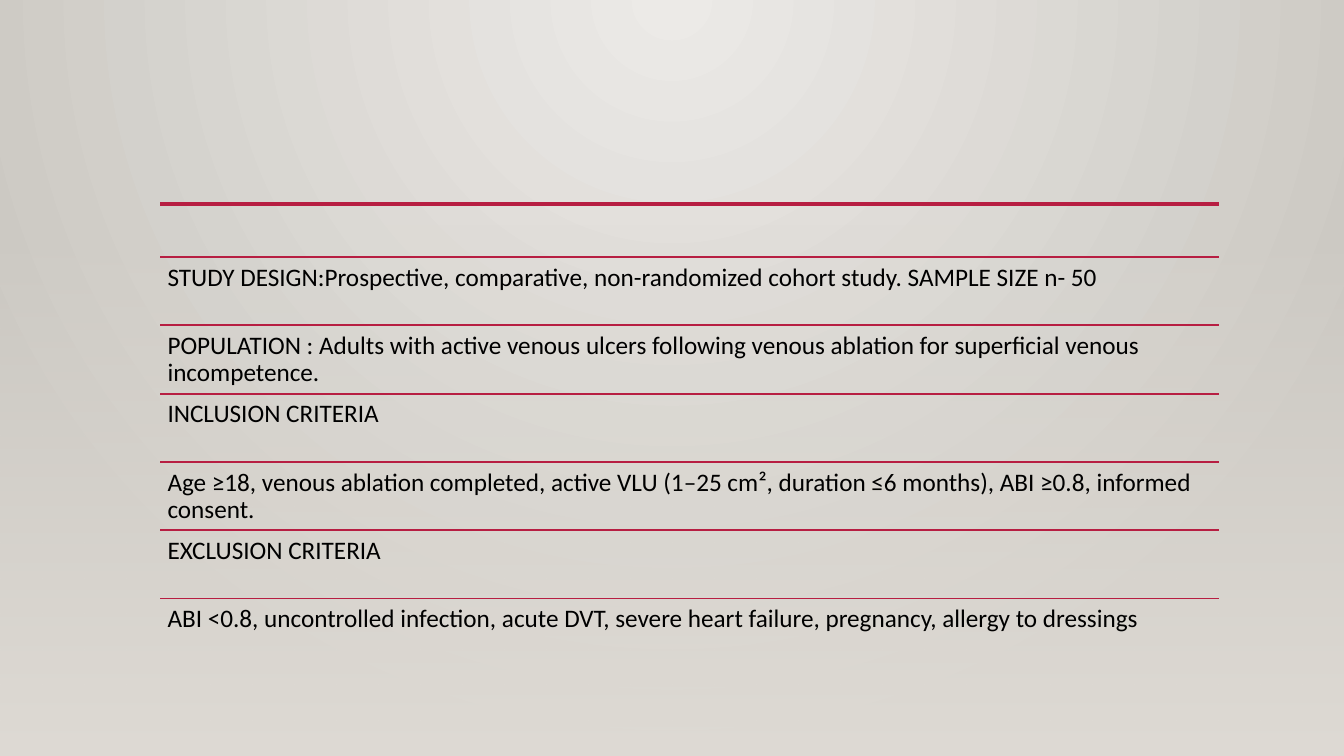
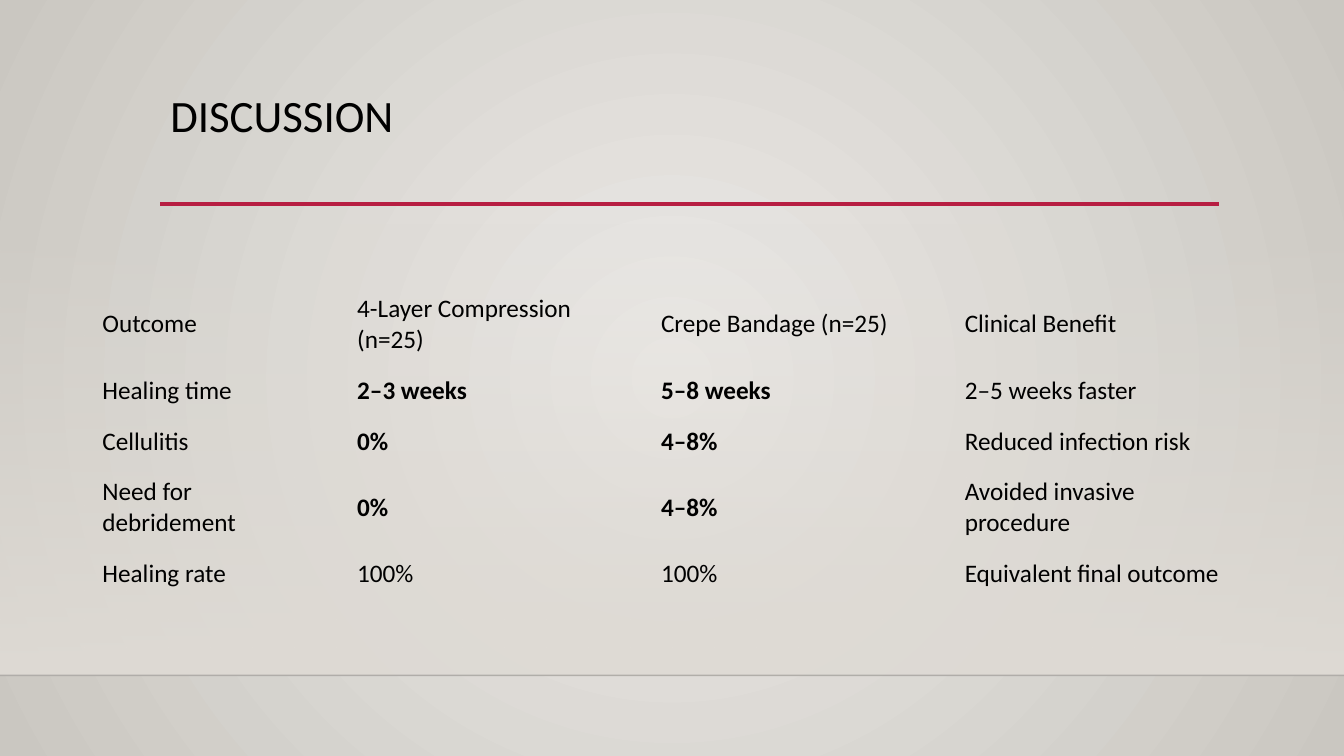
from lxml import etree
from pptx import Presentation
from pptx.dml.color import RGBColor
from pptx.enum.shapes import MSO_CONNECTOR as Connector, MSO_SHAPE as Shape
from pptx.enum.text import MSO_ANCHOR as Anchor, PP_ALIGN as Align
from pptx.oxml import parse_xml
from pptx.oxml.ns import nsdecls, qn
from pptx.util import Pt

# Content
CRITERIA = [
    "STUDY DESIGN:Prospective, comparative, non-randomized cohort study. SAMPLE SIZE n- 50",
    "POPULATION : Adults with active venous ulcers following venous ablation for superficial venous incompetence.",
    "INCLUSION CRITERIA",
    "Age ≥18, venous ablation completed, active VLU (1–25 cm², duration ≤6 months), ABI ≥0.8, informed consent.",
    "EXCLUSION CRITERIA",
    "ABI <0.8, uncontrolled infection, acute DVT, severe heart failure, pregnancy, allergy to dressings",
]
DISCUSSION_TITLE = "DISCUSSION"
OUTCOMES = [
    ("Outcome", "4-Layer Compression (n=25)", "Crepe Bandage (n=25)", "Clinical Benefit"),
    ("Healing time", "2–3 weeks", "5–8 weeks", "2–5 weeks faster"),
    ("Cellulitis", "0%", "4–8%", "Reduced infection risk"),
    ("Need for debridement", "0%", "4–8%", "Avoided invasive procedure"),
    ("Healing rate", "100%", "100%", "Equivalent final outcome"),
]
BOLD_ROWS, BOLD_COLUMNS = (1, 2, 3), (1, 2)

# Shared style, lengths in points
COLORS = {"light": "ECEAE7", "dark": "CAC7C1", "band": "DFDBD5",
          "accent": "B71E42", "floor": "000001", "text": "000000"}
FONT = "Calibri"
SLIDE_WIDTH, SLIDE_HEIGHT = 960, 540
LEFT, WIDTH = 114.5, 756
RULE_TOP, BAND_TOP, FLOOR_TOP = 145.8, 159, 482.4
CRITERIA_TOP, CRITERIA_STEP, CRITERIA_INSET = 183.6, 48.8, 5.2
TABLE_LEFT, TABLE_TOP = 66, 202.3
COLUMN_WIDTHS = (177.2, 217, 217, 217)
ROW_HEIGHTS = (58.3, 36.4, 36.4, 58.3, 36.4)
OUTER_INSET, INNER_INSET = 7.2, 12
PLAIN_TABLE_STYLE = "{2D5ABB26-0587-4C30-8999-92F81FD0307C}"


def set_gradient(parent, stops, direction):
    """Replace the solid fill in parent; stops are (position, colour, alpha)."""
    stop_xml = "".join(
        f'<a:gs pos="{position * 1000}"><a:srgbClr val="{COLORS[name]}">'
        f'<a:alpha val="{alpha * 1000}"/></a:srgbClr></a:gs>'
        for position, name, alpha in stops)
    gradient = parse_xml(f'<a:gradFill {nsdecls("a")} rotWithShape="1">'
                         f'<a:gsLst>{stop_xml}</a:gsLst>{direction}</a:gradFill>')
    parent.replace(parent.find(qn("a:solidFill")), gradient)


def add_line(slide, left, top, width, weight, color="accent", alpha=None):
    line = slide.shapes.add_connector(
        Connector.STRAIGHT, Pt(left), Pt(top), Pt(left + width), Pt(top))
    line.line.color.rgb = RGBColor.from_string(COLORS[color])
    line.line.width = Pt(weight)
    properties = line._element.spPr
    if alpha is not None:
        tone = properties.find(".//" + qn("a:srgbClr"))
        etree.SubElement(tone, qn("a:alpha")).set("val", str(alpha * 1000))
    etree.SubElement(properties, qn("a:effectLst"))


def add_backdrop(slide, focus, band_bottom):
    """Circular background glow, fading band and accent rule."""
    fill = slide.background.fill
    fill.solid()
    fill.fore_color.rgb = RGBColor.from_string(COLORS["light"])
    edges = " ".join(f'{side}="{value * 1000}"' for side, value in zip("ltrb", focus))
    set_gradient(slide.element.find(".//" + qn("p:bgPr")),
                 [(0, "light", 100), (100, "dark", 100)],
                 f'<a:path path="circle"><a:fillToRect {edges}/></a:path>')
    band = slide.shapes.add_shape(
        Shape.RECTANGLE, 0, Pt(BAND_TOP), Pt(SLIDE_WIDTH), Pt(band_bottom - BAND_TOP))
    band.shadow.inherit = False
    band.line.fill.background()
    band.fill.solid()
    set_gradient(band._element.spPr, [(0, "band", 0), (100, "band", 100)],
                 '<a:lin ang="5400000" scaled="0"/>')
    add_line(slide, LEFT, RULE_TOP, WIDTH, 2.5)


def write(frame, text, size=18, bold=False, spacing=None):
    paragraph = frame.paragraphs[0]
    paragraph.alignment = Align.LEFT
    if spacing:
        paragraph.line_spacing = spacing
    run = paragraph.add_run()
    run.text = text
    run.font.name, run.font.size, run.font.bold = FONT, Pt(size), bold
    run.font.color.rgb = RGBColor.from_string(COLORS["text"])


def build_criteria(presentation):
    slide = presentation.slides.add_slide(presentation.slide_layouts[6])
    add_backdrop(slide, (43, 0, 43, 100), SLIDE_HEIGHT)
    for index, text in enumerate(CRITERIA):
        top = CRITERIA_TOP + index * CRITERIA_STEP
        add_line(slide, LEFT, top, WIDTH, 1.25)
        box = slide.shapes.add_textbox(Pt(LEFT), Pt(top), Pt(WIDTH), Pt(CRITERIA_STEP))
        frame = box.text_frame
        frame.word_wrap = True
        frame.margin_left = frame.margin_right = Pt(CRITERIA_INSET)
        frame.margin_top = frame.margin_bottom = Pt(CRITERIA_INSET)
        write(frame, text, spacing=0.9)


def build_discussion(presentation):
    slide = presentation.slides.add_slide(presentation.slide_layouts[5])
    add_backdrop(slide, (50, 50, 50, 50), FLOOR_TOP)
    add_line(slide, 0, FLOOR_TOP, SLIDE_WIDTH, 1, "floor", 20)

    # Title
    title = slide.shapes.title
    title.left, title.top, title.width, title.height = Pt(LEFT), Pt(63.4), Pt(WIDTH), Pt(82.8)
    title.text_frame.vertical_anchor = Anchor.TOP
    write(title.text_frame, DISCUSSION_TITLE, size=32, spacing=0.9)

    # Outcome table
    table_frame = slide.shapes.add_table(
        len(OUTCOMES), len(COLUMN_WIDTHS), Pt(TABLE_LEFT), Pt(TABLE_TOP),
        Pt(sum(COLUMN_WIDTHS)), Pt(sum(ROW_HEIGHTS)))
    table = table_frame.table
    table.first_row = table.horz_banding = False
    table._tbl.tblPr.find(qn("a:tableStyleId")).text = PLAIN_TABLE_STYLE
    for column, width in zip(table.columns, COLUMN_WIDTHS):
        column.width = Pt(width)
    last_column = len(COLUMN_WIDTHS) - 1
    for row_index, (values, height) in enumerate(zip(OUTCOMES, ROW_HEIGHTS)):
        table.rows[row_index].height = Pt(height)
        for column_index, text in enumerate(values):
            cell = table.cell(row_index, column_index)
            cell.fill.background()
            cell.vertical_anchor = Anchor.MIDDLE
            cell.margin_top = cell.margin_bottom = Pt(OUTER_INSET)
            cell.margin_left = Pt(INNER_INSET if column_index else OUTER_INSET)
            at_right_edge = column_index == last_column and row_index > 0
            cell.margin_right = Pt(OUTER_INSET if at_right_edge else INNER_INSET)
            write(cell.text_frame, text,
                  bold=row_index in BOLD_ROWS and column_index in BOLD_COLUMNS)


def main():
    presentation = Presentation()
    presentation.slide_width, presentation.slide_height = Pt(SLIDE_WIDTH), Pt(SLIDE_HEIGHT)
    build_criteria(presentation)
    build_discussion(presentation)
    presentation.save("out.pptx")


if __name__ == "__main__":
    main()
